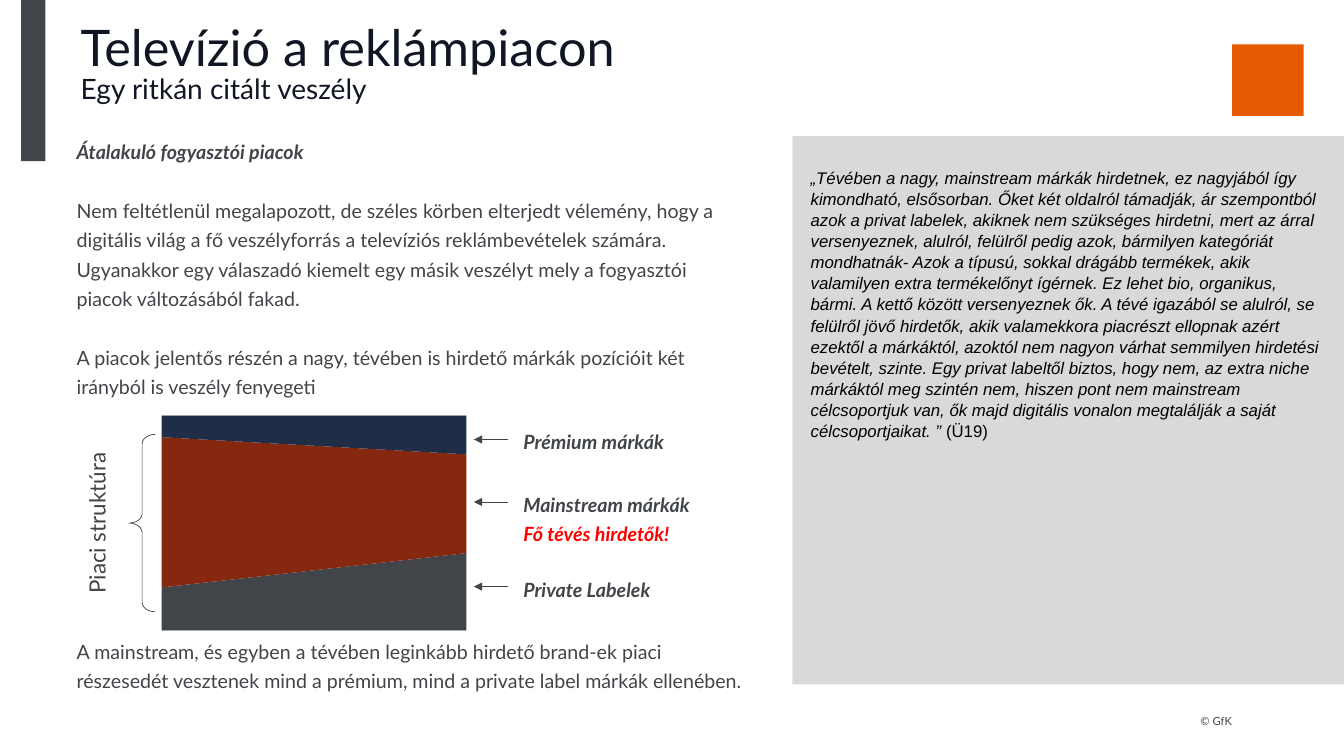
from lxml.etree import SubElement
from pptx import Presentation
from pptx.chart.data import CategoryChartData
from pptx.dml.color import RGBColor
from pptx.enum.chart import XL_CHART_TYPE
from pptx.enum.shapes import MSO_CONNECTOR, MSO_SHAPE
from pptx.enum.text import MSO_ANCHOR, MSO_AUTO_SIZE, PP_ALIGN
from pptx.oxml import parse_xml
from pptx.oxml.ns import nsdecls, qn
from pptx.util import Inches, Pt

GREY, NAVY, RUST, INK = "414549", "202D46", "85280F", "101623"
rgb = RGBColor.from_string


def set_frame(sp, **changes):
    """Give the text frame zero insets, wrapping and top anchoring, then apply changes."""
    tf = sp.text_frame
    base = dict(margin_left=0, margin_right=0, margin_top=0, margin_bottom=0,
                word_wrap=True, auto_size=MSO_AUTO_SIZE.NONE,
                vertical_anchor=MSO_ANCHOR.TOP)
    for name, value in {**base, **changes}.items():
        setattr(tf, name, value)
    return tf


def add_run(p, text, size=14, color=GREY, spacing=1.25, **font):
    p.line_spacing = spacing
    r = p.add_run()
    r.text = text
    for name, value in {"name": "Lato", "size": Pt(size), **font}.items():
        setattr(r.font, name, value)
    r.font.color.rgb = rgb(color)


prs = Presentation()
prs.slide_width, prs.slide_height = Inches(13.33), Inches(7.5)
s = prs.slides.add_slide(prs.slide_layouts[1])
title, body = s.placeholders
shapes = s.shapes

# Blocks: side bar, quote panel, logo square
for left, top, width, height, color in [
    (0.21, 0, 0.24, 1.6, GREY),
    (7.86, 1.35, 5.47, 5.44, "D9D9D9"),
    (12.22, 0.44, 0.71, 0.71, "E55A00"),
]:
    sp = shapes.add_shape(MSO_SHAPE.RECTANGLE, *map(Inches, (left, top, width, height)))
    sp.shadow.inherit = False
    sp.fill.solid()
    sp.fill.fore_color.rgb = rgb(color)
    sp.line.fill.background()

# Title and subtitle
title.left, title.top, title.width, title.height = map(Inches, (0.8, 0.25, 8.45, 0.54))
p = set_frame(title).paragraphs[0]
p.alignment = PP_ALIGN.LEFT
add_run(p, "Televízió a reklámpiacon", 36, INK, 0.85)
p.add_line_break()
add_run(p, "Egy ritkán citált veszély", 20, INK, 0.85)

# Body text; the large gap leaves room for the chart
body.left, body.top, body.width, body.height = map(Inches, (0.76, 1.33, 6.66, 5.6))
tf = set_frame(body)
for i, (gap, text) in enumerate([
    (0, "Átalakuló fogyasztói piacok"),
    (21, "Nem feltétlenül megalapozott, de széles körben elterjedt vélemény, hogy a "
         "digitális világ a fő veszélyforrás a televíziós reklámbevételek számára. "
         "Ugyanakkor egy válaszadó kiemelt egy másik veszélyt mely a fogyasztói "
         "piacok változásából fakad."),
    (21, "A piacok jelentős részén a nagy, tévében is hirdető márkák pozícióit két "
         "irányból is veszély fenyegeti"),
    (168, "A mainstream, és egyben a tévében leginkább hirdető brand-ek piaci "
          "részesedét vesztenek mind a prémium, mind a private label márkák ellenében."),
]):
    p = tf.add_paragraph() if i else tf.paragraphs[0]
    pPr = p._p.get_or_add_pPr()
    pPr.set("marL", "0")
    pPr.set("indent", "0")
    SubElement(pPr, qn("a:buNone"))
    p.space_before = Pt(gap)
    add_run(p, text, bold=i == 0, italic=i == 0)

# Interview quote
sp = shapes.add_textbox(*map(Inches, (8.04, 1.57, 5.12, 3)))
p = set_frame(sp, margin_top=Inches(0.08)).paragraphs[0]
quote = (
    "„Tévében a nagy, mainstream márkák hirdetnek, ez nagyjából így kimondható, "
    "elsősorban. Őket két oldalról támadják, ár szempontból azok a privat labelek, "
    "akiknek nem szükséges hirdetni, mert az árral versenyeznek, alulról, felülről "
    "pedig azok, bármilyen kategóriát mondhatnák- Azok a típusú, sokkal drágább "
    "termékek, akik valamilyen extra termékelőnyt ígérnek. Ez lehet bio, organikus, "
    "bármi. A kettő között versenyeznek ők. A tévé igazából se alulról, se felülről "
    "jövő hirdetők, akik valamekkora piacrészt ellopnak azért ezektől a márkáktól, "
    "azoktól nem nagyon várhat semmilyen hirdetési bevételt, szinte. Egy privat "
    "labeltől biztos, hogy nem, az extra niche márkáktól meg szintén nem, hiszen pont "
    "nem mainstream célcsoportjuk van, ők majd digitális vonalon megtalálják a saját "
    "célcsoportjaikat. ” "
)
add_run(p, quote, 12, "000000", 1.05, name="Arial", italic=True)
add_run(p, "(Ü19)", 12, "000000", 1.05, name="Arial")

# Market structure chart
data = CategoryChartData()
data.categories = ["1", "2", "3", "4", "5"]
series = [
    ("Series 1", range(20, 37, 4), GREY),
    ("Series 2", range(70, 45, -6), RUST),
    ("Series 3", range(10, 19, 2), NAVY),
]
for name, values, _ in series:
    data.add_series(name, values)
chart = shapes.add_chart(XL_CHART_TYPE.AREA_STACKED_100,
                         *map(Inches, (1.54, 4.08, 3.15, 2.22)), data).chart
chart.has_legend = chart.has_title = False
chart.font.name, chart.font.size = "Lato", Pt(10)
chart.font.color.rgb = rgb(GREY)
plot = chart.plots[0]
plot.vary_by_categories = False
for ser, (_, _, color) in zip(plot.series, series):
    ser.format.fill.solid()
    ser.format.fill.fore_color.rgb = rgb(color)
chart.category_axis.visible = chart.value_axis.visible = False
chart.value_axis.has_major_gridlines = True
grid = chart.value_axis.major_gridlines.format.line
grid.color.rgb, grid.width = rgb("E1E3E5"), Pt(0.75)
for cross in chart.element.iter(qn("c:crossBetween")):
    cross.set("val", "midCat")
plot_area = chart.element.find(".//" + qn("c:plotArea"))
for old in plot_area.findall(qn("c:layout")):
    plot_area.remove(old)
plot_area.insert(0, parse_xml(
    f'<c:layout {nsdecls("c")}><c:manualLayout><c:layoutTarget val="inner"/>'
    '<c:xMode val="edge"/><c:yMode val="edge"/><c:x val="0.02"/><c:y val="0.02"/>'
    '<c:w val="0.96"/><c:h val="0.96"/></c:manualLayout></c:layout>'))

# Labels with arrows pointing at the chart bands
for top, lines in [
    (4.21, [("Prémium márkák", GREY)]),
    (4.83, [("Mainstream márkák", GREY), ("Fő tévés hirdetők!", "FF0000")]),
    (5.67, [("Private Labelek", GREY)]),
]:
    y = Inches(top + 0.15)
    arrow = shapes.add_connector(MSO_CONNECTOR.STRAIGHT, Inches(5.04), y, Inches(4.7), y)
    arrow.line.color.rgb, arrow.line.width = rgb(GREY), Pt(0.5)
    SubElement(arrow.line._get_or_add_ln(), qn("a:tailEnd"), type="triangle")
    SubElement(arrow._element.spPr, qn("a:effectLst"))
    sp = shapes.add_textbox(*map(Inches, (5.19, top, 1.92, 0.31 * len(lines))))
    tf = set_frame(sp)
    for i, (text, color) in enumerate(lines):
        p = tf.add_paragraph() if i else tf.paragraphs[0]
        add_run(p, text, color=color, bold=True, italic=True)

# Brace and its rotated caption
brace = shapes.add_shape(MSO_SHAPE.LEFT_BRACE, *map(Inches, (1.28, 4.31, 0.26, 1.76)))
brace.shadow.inherit = False
brace.adjustments[0], brace.adjustments[1] = 0.36, 0.5
brace.fill.background()
brace.line.color.rgb, brace.line.width = rgb(GREY), Pt(0.5)
sp = shapes.add_textbox(*map(Inches, (0.07, 4.95, 1.86, 0.48)))
sp.rotation = 270
p = set_frame(sp).paragraphs[0]
p.alignment = PP_ALIGN.CENTER
add_run(p, "Piaci struktúra", 16)

# Copyright line
sp = shapes.add_textbox(*map(Inches, (11.67, 7.07, 0.55, 0.15)))
p = set_frame(sp, word_wrap=False, vertical_anchor=MSO_ANCHOR.BOTTOM).paragraphs[0]
p.alignment = PP_ALIGN.RIGHT
add_run(p, "© GfK", 8)

prs.save("out.pptx")
